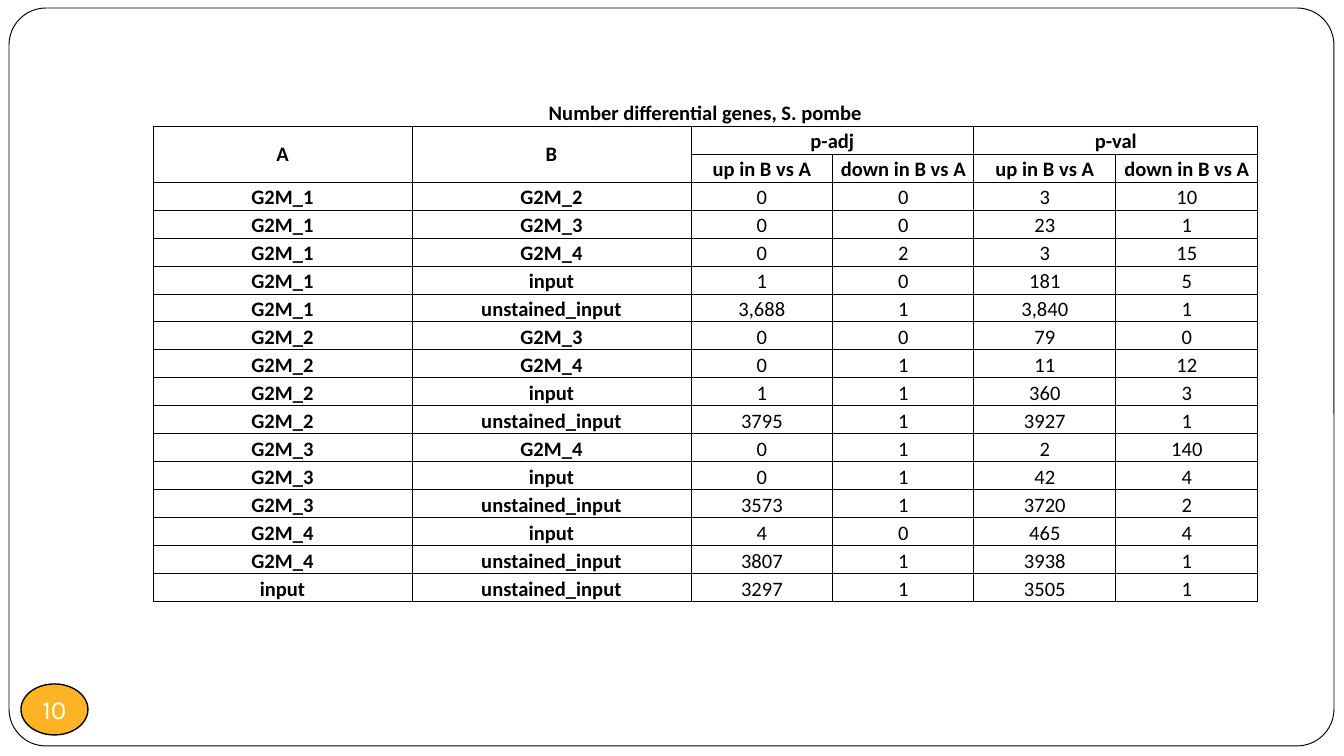
from lxml.etree import SubElement
from pptx import Presentation
from pptx.dml.color import RGBColor
from pptx.enum.shapes import MSO_SHAPE
from pptx.enum.text import MSO_ANCHOR, PP_ALIGN
from pptx.oxml.ns import qn
from pptx.util import Emu, Pt

EMU_PER_PX = 914400 / 134.4
BLACK, WHITE, AMBER = "000000", "FFFFFF", "FCB424"

TITLE = "Number differential genes, S. pombe"
DIRECTIONS = ["up in B vs A", "down in B vs A"]
COMPARISONS = [
    ("G2M_1", "G2M_2", "0", "0", "3", "10"),
    ("G2M_1", "G2M_3", "0", "0", "23", "1"),
    ("G2M_1", "G2M_4", "0", "2", "3", "15"),
    ("G2M_1", "input", "1", "0", "181", "5"),
    ("G2M_1", "unstained_input", "3,688", "1", "3,840", "1"),
    ("G2M_2", "G2M_3", "0", "0", "79", "0"),
    ("G2M_2", "G2M_4", "0", "1", "11", "12"),
    ("G2M_2", "input", "1", "1", "360", "3"),
    ("G2M_2", "unstained_input", "3795", "1", "3927", "1"),
    ("G2M_3", "G2M_4", "0", "1", "2", "140"),
    ("G2M_3", "input", "0", "1", "42", "4"),
    ("G2M_3", "unstained_input", "3573", "1", "3720", "2"),
    ("G2M_4", "input", "4", "0", "465", "4"),
    ("G2M_4", "unstained_input", "3807", "1", "3938", "1"),
    ("input", "unstained_input", "3297", "1", "3505", "1"),
]
ROWS = [
    (TITLE, "", "", "", "", ""),
    ("A", "B", "p-adj", "", "p-val", ""),
    ("", "", *DIRECTIONS, *DIRECTIONS),
    *COMPARISONS,
]
HEADER_ROWS = 3
# First and last (row, column) of each merged block
MERGES = [((0, 0), (0, 5)), ((1, 0), (2, 0)), ((1, 1), (2, 1)),
          ((1, 2), (1, 3)), ((1, 4), (1, 5))]
MIDDLE_CELLS = {(1, 0), (1, 1)}


def px(value):
    return Emu(round(value * EMU_PER_PX))


def color(value):
    return RGBColor.from_string(value)


class SlideBuilder:
    table_font, number_font = "Calibri", "Karla"
    table_size, number_size = 11, 14
    grid_width = 0.5

    def __init__(self, page):
        self.page = page

    def shape(self, kind, left, top, width, height, fill, line_width):
        shape = self.page.shapes.add_shape(
            kind, px(left), px(top), px(width), px(height))
        shape.shadow.inherit = False
        shape.fill.solid()
        shape.fill.fore_color.rgb = color(fill)
        shape.line.color.rgb = color(BLACK)
        shape.line.width = Pt(line_width)
        return shape

    def text(self, frame, words, font, size, ink, bold=False):
        para = frame.paragraphs[0]
        para.alignment = PP_ALIGN.CENTER
        span = para.add_run()
        span.text = words
        span.font.name = font
        span.font.size = Pt(size)
        span.font.bold = bold
        span.font.color.rgb = color(ink)

    def frame(self):
        box = self.shape(MSO_SHAPE.ROUNDED_RECTANGLE, 9, 8, 1325, 738, WHITE, 0.5)
        box.adjustments[0] = 0.05

    def page_number(self, number):
        badge = self.shape(MSO_SHAPE.OVAL, 21, 684, 67, 51, AMBER, 0.75)
        frame = badge.text_frame
        frame.margin_left = frame.margin_right = 0
        frame.margin_top = frame.margin_bottom = 0
        frame.word_wrap = False
        frame.vertical_anchor = MSO_ANCHOR.MIDDLE
        self.text(frame, number, self.number_font, self.number_size, WHITE)

    def borders(self, cell, visible):
        properties = cell._tc.get_or_add_tcPr()
        for side in "LRTB":
            line = SubElement(properties, qn(f"a:ln{side}"),
                              w=str(Pt(self.grid_width)))
            if side in visible:
                fill = SubElement(line, qn("a:solidFill"))
                SubElement(fill, qn("a:srgbClr"), val=BLACK)
            else:
                SubElement(line, qn("a:noFill"))

    def table(self, left, top, column_widths, row_height):
        table = self.page.shapes.add_table(
            len(ROWS), len(column_widths), px(left), px(top),
            px(sum(column_widths)), px(row_height * len(ROWS))).table
        table.first_row = table.horz_banding = False
        for column, width in zip(table.columns, column_widths):
            column.width = px(width)
        for row in table.rows:
            row.height = px(row_height)
        for first, last in MERGES:
            table.cell(*first).merge(table.cell(*last))

        for row, values in enumerate(ROWS):
            for column, words in enumerate(values):
                cell = table.cell(row, column)
                cell.margin_left = cell.margin_right = cell.margin_top = px(1)
                cell.margin_bottom = 0
                middle = (row, column) in MIDDLE_CELLS
                cell.vertical_anchor = MSO_ANCHOR.MIDDLE if middle else MSO_ANCHOR.BOTTOM
                self.borders(cell, "LRTB" if row else "B")
                cell.fill.background()
                if words:
                    bold = row < HEADER_ROWS or column < 2
                    self.text(cell.text_frame, words, self.table_font,
                              self.table_size, BLACK, bold)


def main():
    deck = Presentation()
    deck.slide_width, deck.slide_height = px(1344), px(756)
    builder = SlideBuilder(deck.slides.add_slide(deck.slide_layouts[6]))

    # Rounded page frame and number badge
    builder.frame()
    builder.page_number("10")

    # Gene counts for each pair of samples
    builder.table(153, 98, [259, 279, 142, 141, 142, 142], 28)

    deck.save("out.pptx")


if __name__ == "__main__":
    main()
